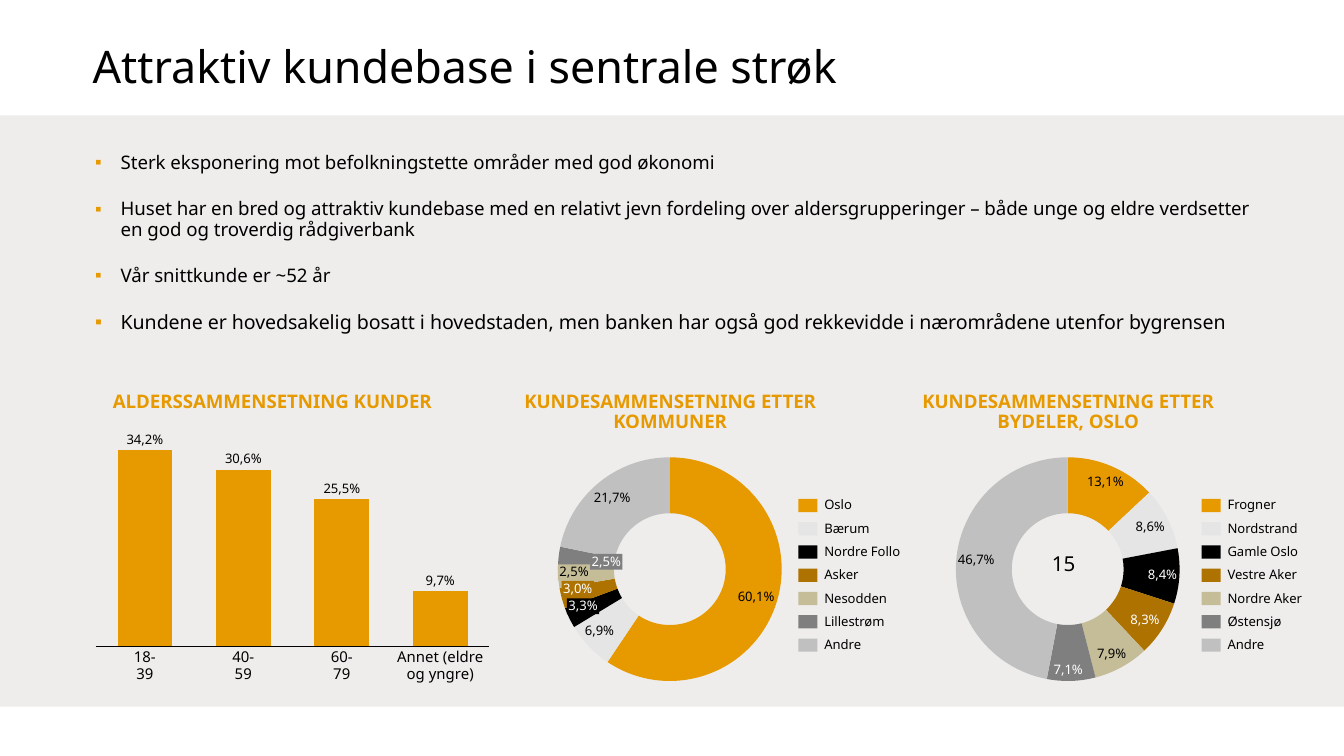
from dataclasses import dataclass

from lxml.etree import SubElement, fromstring
from pptx import Presentation
from pptx.chart.data import CategoryChartData
from pptx.dml.color import RGBColor
from pptx.enum.chart import XL_CHART_TYPE as ChartType, XL_TICK_LABEL_POSITION as TickLabels
from pptx.enum.chart import XL_TICK_MARK as TickMark
from pptx.enum.shapes import MSO_SHAPE as Shape
from pptx.enum.text import MSO_ANCHOR as Anchor, MSO_AUTO_SIZE as AutoSize, PP_ALIGN as Align
from pptx.oxml.ns import nsdecls, qn
from pptx.util import Cm, Pt


@dataclass(frozen=True)
class Theme:
    font: str = "Noto Sans"
    orange: str = "E79900"
    black: str = "000000"
    white: str = "FFFFFF"
    panel: str = "EEEDEC"
    slices: tuple = ("E79900", "E6E5E5", "000000", "AD7200", "C4BD97", "7F7F7F", "C0C0C0")
    title_size: float = 24
    body_size: float = 10
    closing_size: float = 10.5
    center_size: float = 11
    category_size: float = 8
    label_size: float = 7
    line_spacing: float = 0.9


THEME = Theme()


def rgb(color):
    return RGBColor.from_string(color)


def write(frame, text, size=THEME.body_size, color=THEME.black, bold=False, align=Align.LEFT,
          anchor=Anchor.TOP, insets=(0, 0), wrap=True):
    """Fill a text frame with one paragraph; insets are (sides, top and bottom) in cm."""
    frame.auto_size = AutoSize.NONE
    frame.word_wrap = wrap
    frame.vertical_anchor = anchor
    frame.margin_left = frame.margin_right = Cm(insets[0])
    frame.margin_top = frame.margin_bottom = Cm(insets[1])
    frame.text = text
    style_paragraph(frame.paragraphs[0], size, color, bold, align)


def style_paragraph(paragraph, size, color=THEME.black, bold=False, align=Align.LEFT):
    paragraph.alignment = align
    paragraph.line_spacing = THEME.line_spacing
    for run in paragraph.runs:
        run.font.name = THEME.font
        run.font.size = Pt(size)
        run.font.bold = bold
        run.font.color.rgb = rgb(color)


class SlideBuilder:
    """Holds the theme and the current slide; all lengths are in cm."""

    def __init__(self, slide, theme):
        self.slide, self.theme = slide, theme
        self.shapes = slide.shapes

    def place(self, item, left, top, width, height):
        item.left, item.top, item.width, item.height = map(Cm, (left, top, width, height))

    def title(self, text, *box):
        title = self.shapes.title
        self.place(title, *box)
        write(title.text_frame, text, self.theme.title_size, anchor=Anchor.MIDDLE)

    def bullets(self, items, *box):
        """Fill the body placeholder from (text, size) pairs."""
        body = self.slide.placeholders[1]
        self.place(body, *box)
        frame = body.text_frame
        write(frame, items[0][0])
        for index, (text, size) in enumerate(items):
            paragraph = frame.paragraphs[0] if index == 0 else frame.add_paragraph()
            paragraph.text = text
            properties = paragraph._p.get_or_add_pPr()
            properties.set("marL", str(Cm(0.48)))
            properties.set("indent", str(-Cm(0.48)))
            tint = SubElement(properties, qn("a:buClr"))
            SubElement(tint, qn("a:srgbClr"), val=self.theme.orange)
            SubElement(properties, qn("a:buChar"), char="▪")
            paragraph.space_before = Pt(14 if index else 0)
            style_paragraph(paragraph, size)

    def block(self, color, *box, behind=False):
        block = self.shapes.add_shape(Shape.RECTANGLE, *map(Cm, box))
        block.shadow.inherit = False
        block.fill.solid()
        block.fill.fore_color.rgb = rgb(color)
        block.line.fill.background()
        if behind:
            block._element.getparent().insert(2, block._element)
        return block

    def text(self, text, *box, **style):
        write(self.shapes.add_textbox(*map(Cm, box)).text_frame, text, **style)

    def share_label(self, text, center, middle, color=THEME.black, fill=None, anchor=Anchor.MIDDLE):
        width, height = (0.79 if len(text) > 4 else 0.61), 0.3
        box = (center - width / 2, middle - height / 2, width, height)
        label = self.block(fill, *box) if fill else self.shapes.add_textbox(*map(Cm, box))
        write(label.text_frame, text, self.theme.label_size, color, align=Align.CENTER,
              anchor=anchor, insets=(0.03, 0), wrap=False)

    def chart(self, kind, values, box, plot_box):
        """Add a one-series chart; plot_box is the inner plot area as fractions of the frame."""
        data = CategoryChartData()
        data.categories = [str(number + 1) for number in range(len(values))]
        data.add_series("Series 1", values)
        chart = self.shapes.add_chart(kind, *map(Cm, box), data).chart
        chart.has_legend = chart.has_title = False
        space = chart._chartSpace
        space.find(qn("c:chart")).addnext(
            fromstring(f'<c:spPr {nsdecls("c", "a")}><a:noFill/><a:ln><a:noFill/></a:ln></c:spPr>'))
        chart.font.name = self.theme.font
        chart.font.size = Pt(self.theme.body_size)
        chart.font.color.rgb = rgb(self.theme.black)
        area = space.find(".//" + qn("c:plotArea"))
        for old in area.findall(qn("c:layout")):
            area.remove(old)
        layout = fromstring(f'<c:layout {nsdecls("c")}><c:manualLayout/></c:layout>')
        settings = [("layoutTarget", "inner"), ("xMode", "edge"), ("yMode", "edge"),
                    *zip("xywh", map(str, plot_box))]
        for name, value in settings:
            SubElement(layout[0], qn(f"c:{name}"), val=value)
        area.insert(0, layout)
        return chart

    def doughnut(self, values, *box):
        plot = self.chart(ChartType.DOUGHNUT, values, box, (0.05, 0.05, 0.9, 0.9)).plots[0]
        plot.vary_by_categories = True
        for index, color in enumerate(self.theme.slices):
            look = plot.series[0].points[index].format
            look.fill.solid()
            look.fill.fore_color.rgb = rgb(color)
            look.line.fill.background()

    def columns(self, values, box, plot_box):
        chart = self.chart(ChartType.COLUMN_STACKED, values, box, plot_box)
        plot = chart.plots[0]
        plot.gap_width, plot.overlap, plot.vary_by_categories = 80, 100, False
        plot.series[0].format.fill.solid()
        plot.series[0].format.fill.fore_color.rgb = rgb(self.theme.orange)
        ages, shares = chart.category_axis, chart.value_axis
        ages.tick_label_position = TickLabels.NONE
        ages.major_tick_mark = ages.minor_tick_mark = TickMark.NONE
        ages.format.line.color.rgb = rgb(self.theme.black)
        ages.format.line.width = Pt(0.75)
        shares.minimum_scale, shares.maximum_scale = 0, 100
        shares.has_major_gridlines = shares.visible = False

    def legend(self, names, left, top):
        for row, (name, color) in enumerate(zip(names, self.theme.slices)):
            row_top = top + row * 0.44
            self.block(color, left, row_top, 0.36, 0.25)
            self.text(name, left + 0.49, row_top - 0.02, 1.6, 0.3,
                      size=self.theme.label_size, anchor=Anchor.MIDDLE)


def age_section(page):
    left, top, width, height = 1.57, 8.28, 7.92, 4.17
    inset_x, inset_y = 0.03, 0.055
    ages = [("18-\v39", "34,2%", 100), ("40-\v59", "30,6%", 90),
            ("60-\v79", "25,5%", 75), ("Annet (eldre og yngre)", "9,7%", 28)]
    page.columns([height_share for _, _, height_share in ages], (left, top, width, height),
                 (inset_x, inset_y, 1 - 2 * inset_x, 1 - 2 * inset_y))
    step = width * (1 - 2 * inset_x) / len(ages)
    plot_height = height * (1 - 2 * inset_y)
    for index, (age, share, height_share) in enumerate(ages):
        center = left + width * inset_x + step * (index + 0.5)
        bar_top = top + height * inset_y + plot_height * (1 - height_share / 100)
        page.text(age, center - 0.87, 12.29, 1.74, 0.69, size=THEME.category_size,
                  align=Align.CENTER)
        page.share_label(share, center, bar_top - 0.21, anchor=Anchor.BOTTOM)


def main():
    deck = Presentation()
    deck.slide_width, deck.slide_height = Cm(25.4), Cm(14.29)
    page = SlideBuilder(deck.slides.add_slide(deck.slide_layouts[1]), THEME)
    _, _, black, brown, sand, gray, _ = THEME.slices
    white = THEME.white

    page.block(THEME.panel, 0, 2.18, 25.4, 11.18, behind=True)
    page.title("Attraktiv kundebase i sentrale strøk", 1.75, 0.79, 19.53, 1.02)
    page.bullets([
        ("Sterk eksponering mot befolkningstette områder med god økonomi", THEME.body_size),
        ("Huset har en bred og attraktiv kundebase med en relativt jevn fordeling over "
         "aldersgrupperinger – både unge og eldre verdsetter en god og troverdig rådgiverbank",
         THEME.body_size),
        ("Vår snittkunde er ~52 år", THEME.body_size),
        ("Kundene er hovedsakelig bosatt i hovedstaden, men banken har også god rekkevidde i "
         "nærområdene utenfor bygrensen", THEME.closing_size),
    ], 1.8, 2.9, 21.97, 4.27)

    headings = ("ALDERSSAMMENSETNING KUNDER", "KUNDESAMMENSETNING ETTER KOMMUNER",
                "KUNDESAMMENSETNING ETTER BYDELER, OSLO")
    for column, heading in enumerate(headings):
        page.text(heading, 1.74 + column * 7.52, 7.29, 6.81, 1.12, color=THEME.orange, bold=True,
                  align=Align.CENTER, insets=(0.25, 0.13))

    page.doughnut((60, 7, 3, 3, 3, 3, 22), 10.31, 8.41, 4.7, 4.7)
    page.doughnut((13, 9, 8, 8, 8, 7, 47), 17.83, 8.41, 4.7, 4.7)
    share_labels = [
        ("60,1%", 14.29, 11.3), ("6,9%", 11.33, 11.94), ("3,3%", 11.02, 11.46, white, black),
        ("3,0%", 10.92, 11.13, white, brown), ("2,5%", 10.85, 10.82, THEME.black, sand),
        ("2,5%", 11.46, 10.62, white, gray), ("21,7%", 11.57, 9.42),
        ("13,1%", 20.89, 9.12), ("8,6%", 21.74, 9.96), ("8,4%", 21.97, 10.87, white),
        ("8,3%", 21.64, 11.73, white), ("7,9%", 21.01, 12.37), ("7,1%", 20.19, 12.67, white),
        ("46,7%", 18.45, 10.59),
    ]
    for label in share_labels:
        page.share_label(*label)
    page.text("15", 19.63, 10.34, 1.7, 0.74, size=THEME.center_size, insets=(0.25, 0.13))
    page.legend(("Oslo", "Bærum", "Nordre Follo", "Asker", "Nesodden", "Lillestrøm", "Andre"),
                15.09, 9.43)
    page.legend(("Frogner", "Nordstrand", "Gamle Oslo", "Vestre Aker", "Nordre Aker", "Østensjø",
                 "Andre"), 22.71, 9.43)
    age_section(page)
    deck.save("out.pptx")


if __name__ == "__main__":
    main()
